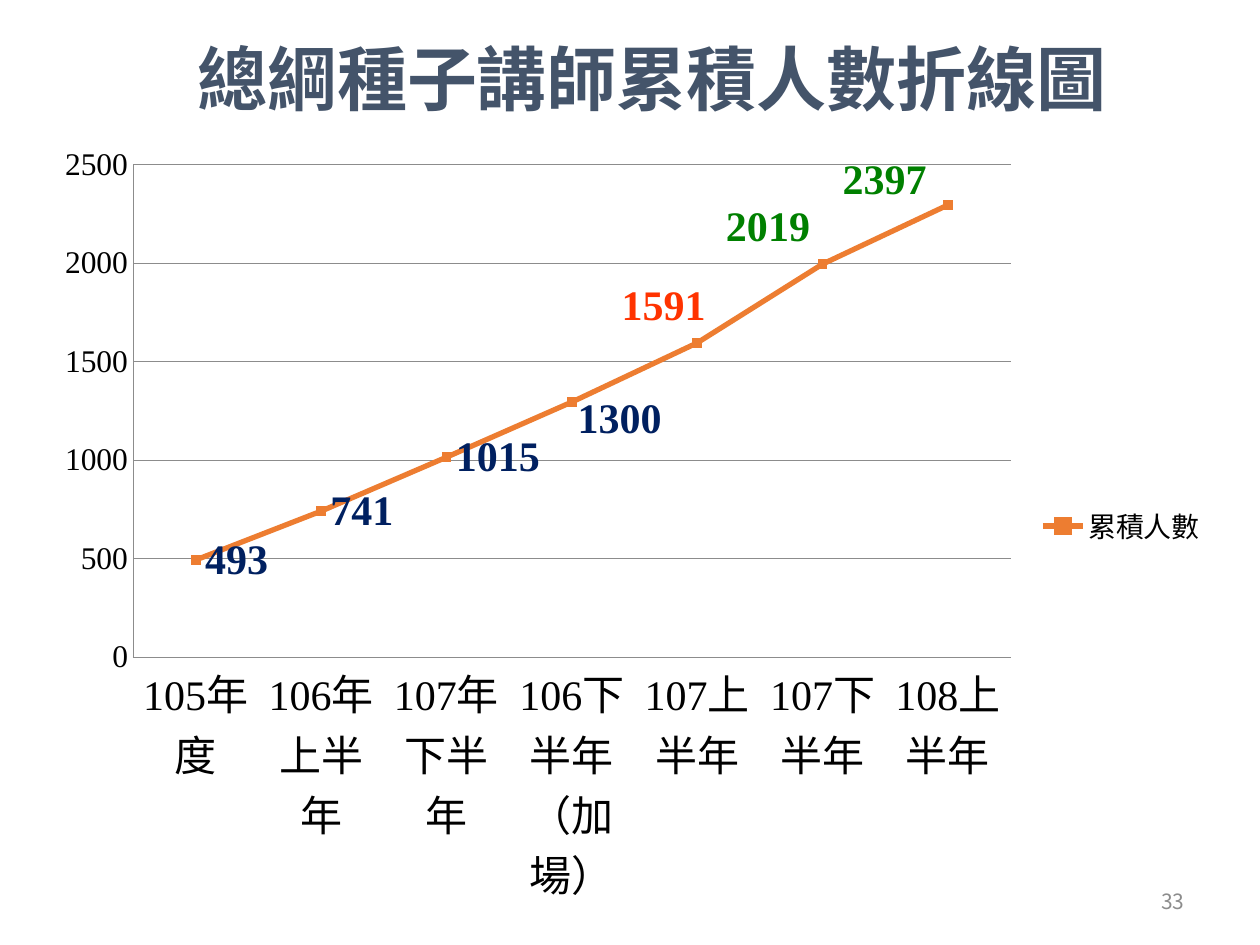
"""Build the slide with the line chart of cumulative seed lecturers."""
from lxml.etree import SubElement
from pptx import Presentation
from pptx.chart.data import CategoryChartData
from pptx.dml.color import RGBColor
from pptx.enum.chart import XL_CHART_TYPE, XL_LABEL_POSITION, XL_LEGEND_POSITION, XL_MARKER_STYLE, XL_TICK_MARK
from pptx.enum.text import MSO_ANCHOR, PP_ALIGN
from pptx.oxml import parse_xml
from pptx.oxml.ns import nsdecls, qn
from pptx.util import Pt

COLORS = {
    "title": "44546A", "number": "8C8C8C", "text": "000000", "grid": "8C8C8C",
    "line": "ED7D31", "navy": "002060", "red": "FF3300", "green": "008000",
}
SERIF = "Times New Roman"
CHART_WIDTH, CHART_HEIGHT = 672.5, 450


def style_font(font, size, color, name=SERIF, bold=False):
    font.size = Pt(size)
    font.name = name
    font.bold = bold
    font.color.rgb = RGBColor.from_string(COLORS[color])


def set_layout(parent, index, **settings):
    for old_layout in parent.findall(qn("c:layout")):
        parent.remove(old_layout)
    layout = parse_xml(f"<c:layout {nsdecls('c')}><c:manualLayout/></c:layout>")
    for key, value in settings.items():
        SubElement(layout[0], qn(f"c:{key}")).set("val", str(value))
    parent.insert(index, layout)


deck = Presentation()
deck.slide_width, deck.slide_height = Pt(720), Pt(540)
page = deck.slides.add_slide(deck.slide_layouts[6])

chart_data = CategoryChartData()
chart_data.categories = [
    "105年度", "106年上半年", "107年下半年", "106下半年（加場）",
    "107上半年", "107下半年", "108上半年",
]
chart_data.add_series("累積人數", [493, 741, 1015, 1295, 1595, 1995, 2295])
chart = page.shapes.add_chart(
    XL_CHART_TYPE.LINE_MARKERS, Pt(24), Pt(75.6), Pt(CHART_WIDTH), Pt(CHART_HEIGHT), chart_data
).chart
chart.has_title = False
style_font(chart.font, 10, "text", "Calibri")
chart.has_legend = True
chart.legend.position = XL_LEGEND_POSITION.RIGHT
chart.legend.include_in_layout = False
style_font(chart.legend.font, 16, "text", "Calibri")
set_layout(chart.element.xpath(".//c:plotArea")[0], 0, layoutTarget="inner",
           xMode="edge", yMode="edge", x=52 / CHART_WIDTH, y=18.5 / CHART_HEIGHT,
           w=501.5 / CHART_WIDTH, h=281.5 / CHART_HEIGHT)

value_axis = chart.value_axis
value_axis.minimum_scale, value_axis.maximum_scale, value_axis.major_unit = 0, 2500, 500
value_axis.has_major_gridlines = True
for axis, size in [(chart.category_axis, 24), (value_axis, 18)]:
    axis.major_tick_mark = axis.minor_tick_mark = XL_TICK_MARK.NONE
    style_font(axis.tick_labels.font, size, "text")
chart.element.xpath(".//c:catAx/c:txPr/a:bodyPr")[0].set("rot", "0")
for line in [chart.category_axis.format.line, value_axis.format.line,
             value_axis.major_gridlines.format.line]:
    line.width = Pt(0.5)
    line.color.rgb = RGBColor.from_string(COLORS["grid"])

chart.plots[0].vary_by_categories = False
series = chart.plots[0].series[0]
series.smooth = False
line_color = RGBColor.from_string(COLORS["line"])
series.format.line.width = Pt(3)
series.format.line.color.rgb = line_color
series.marker.style = XL_MARKER_STYLE.SQUARE
series.marker.size = 5
series.marker.format.fill.solid()
series.marker.format.fill.fore_color.rgb = line_color
series.marker.format.line.color.rgb = line_color

labels = series.data_labels
labels.show_value = True
labels.position = XL_LABEL_POSITION.RIGHT
style_font(labels.font, 24, "navy", bold=True)
custom_labels = [
    (3, "1300", "navy", -2, 10),
    (4, "1591", "red", -48.5, -21),
    (5, "2019", "green", -60.5, -21),
    (6, "2397", "green", -65.5, -14.5),
]
for point, text, color, shift_x, shift_y in custom_labels:
    label = series.points[point].data_label
    span = label.text_frame.paragraphs[0].add_run()
    span.text = text
    style_font(span.font, 24, color, bold=True)
    label.position = XL_LABEL_POSITION.RIGHT
    label_element = chart.element.xpath(f".//c:dLbl[c:idx/@val='{point}']")[0]
    set_layout(label_element, 1, x=shift_x / CHART_WIDTH, y=shift_y / CHART_HEIGHT)

for leader_lines in chart.element.xpath(".//c:showLeaderLines"):
    leader_lines.set("val", "0")
chart.element.xpath(".//c:ser/c:dLbls")[0].append(parse_xml(
    f'<c:extLst {nsdecls("c")}><c:ext uri="{{CE6537A1-D6FC-4f65-9D91-7224C49458BB}}" '
    'xmlns:c15="http://schemas.microsoft.com/office/drawing/2012/chart">'
    '<c15:showLeaderLines val="0"/></c:ext></c:extLst>'
))

texts = [
    ("33", (516.25, 500.5, 167.75, 28.75), PP_ALIGN.RIGHT, 12, "number", "Noto Sans CJK SC", False),
    ("總綱種子講師累積人數折線圖", (48.5, -0.5, 648, 90), PP_ALIGN.CENTER, 40, "title", SERIF, True),
]
for text, place, alignment, size, color, font_name, bold in texts:
    box = page.shapes.add_textbox(*(Pt(length) for length in place))
    box.text_frame.word_wrap = True
    box.text_frame.vertical_anchor = MSO_ANCHOR.MIDDLE
    para = box.text_frame.paragraphs[0]
    para.alignment = alignment
    span = para.add_run()
    span.text = text
    style_font(span.font, size, color, font_name, bold)

deck.save("out.pptx")
